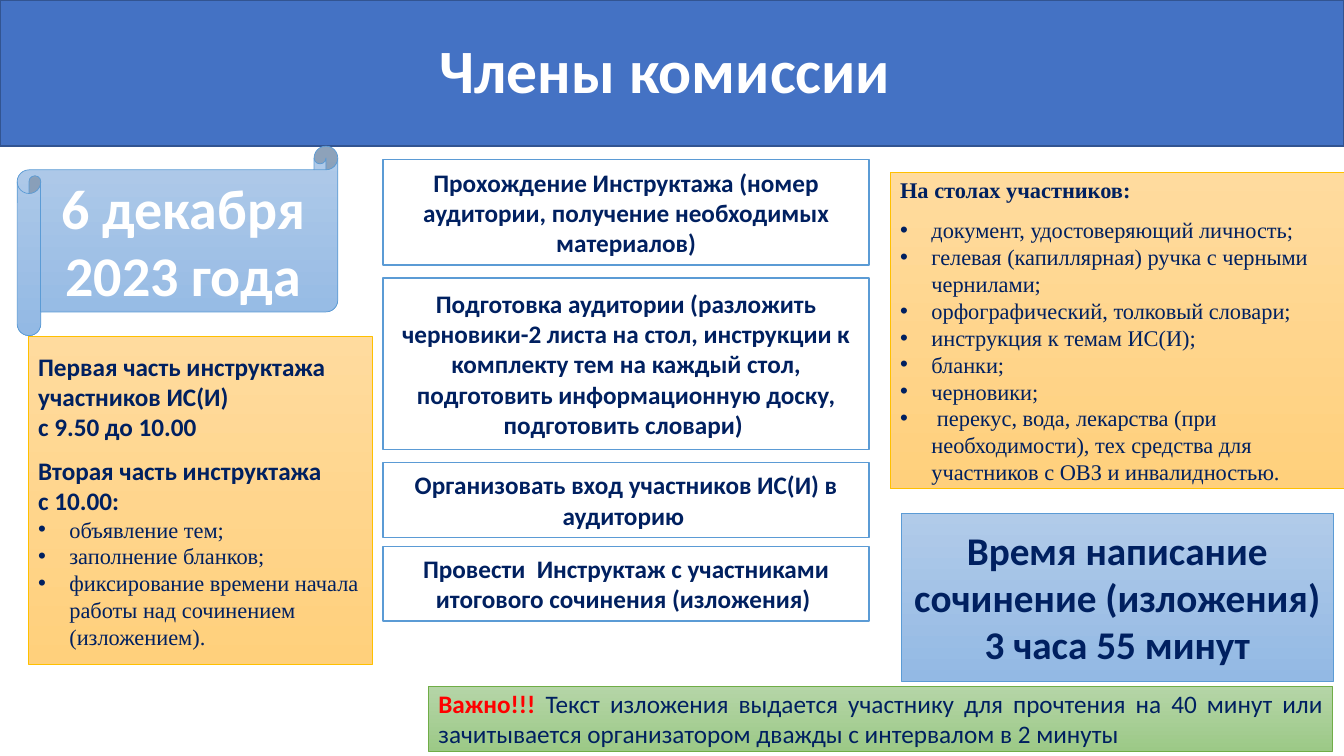
from lxml import etree
from pptx import Presentation, util as u
from pptx.dml.color import RGBColor
from pptx.enum import shapes, text
from pptx.oxml.ns import qn

COLORS = {
    "white": "FFFFFF", "navy": "002060", "red": "FF0000",
    "title": "4472C4", "title_line": "325491",
    "blue_top": "B1CBE9", "blue_bottom": "93B9E4", "blue_line": "5B9BD5",
    "gold_top": "FFDB9E", "gold_bottom": "FFD07C", "gold_line": "FFC000",
    "green_top": "B5D5A7", "green_bottom": "9CC987", "green_line": "70AD47",
}
SANS, SERIF = "Calibri", "Times New Roman"
RECT = shapes.MSO_SHAPE.RECTANGLE
SCROLL = shapes.MSO_SHAPE.HORIZONTAL_SCROLL
CENTER, LEFT, JUSTIFY = (text.PP_ALIGN.CENTER, text.PP_ALIGN.LEFT,
                         text.PP_ALIGN.JUSTIFY)

TITLE = "Члены комиссии "
DATE = "6 декабря 2023 года"
DURATION = "Время написание сочинение (изложения) 3 часа 55 минут"
WARNING = "Важно!!! "
NOTE = ("Текст изложения выдается участнику для прочтения на 40 минут или "
        "зачитывается организатором дважды с интервалом в 2 минуты")

# Step text, top, height
STEPS = [
    ("Прохождение Инструктажа (номер аудитории, получение необходимых "
     "материалов)", 1.58, 1.05),
    ("Подготовка аудитории (разложить черновики-2 листа на стол, инструкции "
     "к комплекту тем на каждый стол, подготовить информационную доску, "
     "подготовить словари) ", 2.76, 1.7),
    ("Организовать вход участников ИС(И) в аудиторию ", 4.59, 0.74),
    ("Провести  Инструктаж с участниками итогового сочинения (изложения) ",
     5.42, 0.74),
]
# Heading paragraphs: text, space before in points
BRIEFING_HEADS = [
    ("Первая часть инструктажа участников ИС(И)", 0),
    ("с 9.50 до 10.00", 0),
    ("Вторая часть инструктажа", 9.75),
    ("с 10.00:", 0),
]
BRIEFING_ITEMS = [
    "объявление тем;",
    "заполнение бланков;",
    "фиксирование времени начала работы над сочинением (изложением).",
]
DESK_HEAD = "На столах участников:"
DESK_ITEMS = [
    "документ, удостоверяющий личность;",
    "гелевая (капиллярная) ручка с черными чернилами;",
    "орфографический, толковый словари;",
    "инструкция к темам ИС(И);",
    "бланки;",
    "черновики;",
    " перекус, вода, лекарства (при необходимости), тех средства для "
    "участников с ОВЗ и инвалидностью.",
]


def rgb(name):
    return RGBColor.from_string(COLORS[name])


def add_box(s, kind, box, fill, line, width=0.5):
    """Add a shape; a fill with _top and _bottom colours becomes a gradient."""
    sp = s.shapes.add_shape(kind, *map(u.Inches, box))
    sp.shadow.inherit = False
    if fill in COLORS:
        sp.fill.solid()
        sp.fill.fore_color.rgb = rgb(fill)
    else:
        sp.fill.gradient()
        sp.fill.gradient_angle = 270
        for stop, end in zip(sp.fill.gradient_stops, ("_top", "_bottom")):
            stop.color.rgb = rgb(fill + end)
    sp.line.color.rgb = rgb(line)
    sp.line.width = u.Pt(width)
    tf = sp.text_frame
    tf.word_wrap = True
    tf.vertical_anchor = text.MSO_ANCHOR.MIDDLE
    return tf


def add_paragraph(tf, align=LEFT, before=0):
    first = tf.paragraphs[0]
    p = tf.add_paragraph() if first.runs else first
    p.alignment = align
    p.space_before = u.Pt(before)
    return p


def add_run(p, words, size=18, color="navy", bold=True, font=SANS):
    r = p.add_run()
    r.text = words
    r.font.size = u.Pt(size)
    r.font.name = font
    r.font.bold = bold
    r.font.color.rgb = rgb(color)


def add_bullets(tf, items, gap=0):
    """Add bulleted lines, with a gap in points above the first."""
    for i, item in enumerate(items):
        p = add_paragraph(tf, before=0 if i else gap)
        pPr = p._p.get_or_add_pPr()
        pPr.set("marL", str(u.Inches(0.31)))
        pPr.set("indent", str(-u.Inches(0.31)))
        etree.SubElement(pPr, qn("a:buFont")).set("typeface", "Arial")
        etree.SubElement(pPr, qn("a:buChar")).set("char", "•")
        add_run(p, item, 16, bold=False, font=SERIF)


def main():
    prs = Presentation()
    prs.slide_width, prs.slide_height = u.Inches(13.33), u.Inches(7.5)
    s = prs.slides.add_slide(prs.slide_layouts[6])

    tf = add_box(s, RECT, (0, 0, 13.33, 1.45), "title", "title_line", 1)
    p = add_paragraph(tf, CENTER)
    p.line_spacing = 0.9
    add_run(p, TITLE, 44, "white")

    tf = add_box(s, SCROLL, (0.17, 1.45, 3.18, 1.88), "blue", "blue_line")
    add_run(add_paragraph(tf, CENTER), DATE, 40, "white")

    for step, top, height in STEPS:
        tf = add_box(s, RECT, (3.8, top, 4.82, height), "white", "blue_line", 1)
        add_run(add_paragraph(tf, CENTER), step)

    tf = add_box(s, RECT, (8.83, 1.71, 4.5, 3.14), "gold", "gold_line")
    add_run(add_paragraph(tf), DESK_HEAD, 16, font=SERIF)
    add_bullets(tf, DESK_ITEMS, gap=9.75)

    tf = add_box(s, RECT, (0.28, 3.34, 3.41, 3.25), "gold", "gold_line")
    for head, before in BRIEFING_HEADS:
        add_run(add_paragraph(tf, before=before), head)
    add_bullets(tf, BRIEFING_ITEMS)

    tf = add_box(s, RECT, (8.94, 5.09, 4.28, 1.67), "blue", "blue_line")
    add_run(add_paragraph(tf, CENTER), DURATION, 28)

    tf = add_box(s, RECT, (4.25, 6.81, 8.97, 0.64), "green", "green_line")
    p = add_paragraph(tf, JUSTIFY)
    add_run(p, WARNING, color="red")
    add_run(p, NOTE, bold=False)

    prs.save("out.pptx")


if __name__ == "__main__":
    main()
